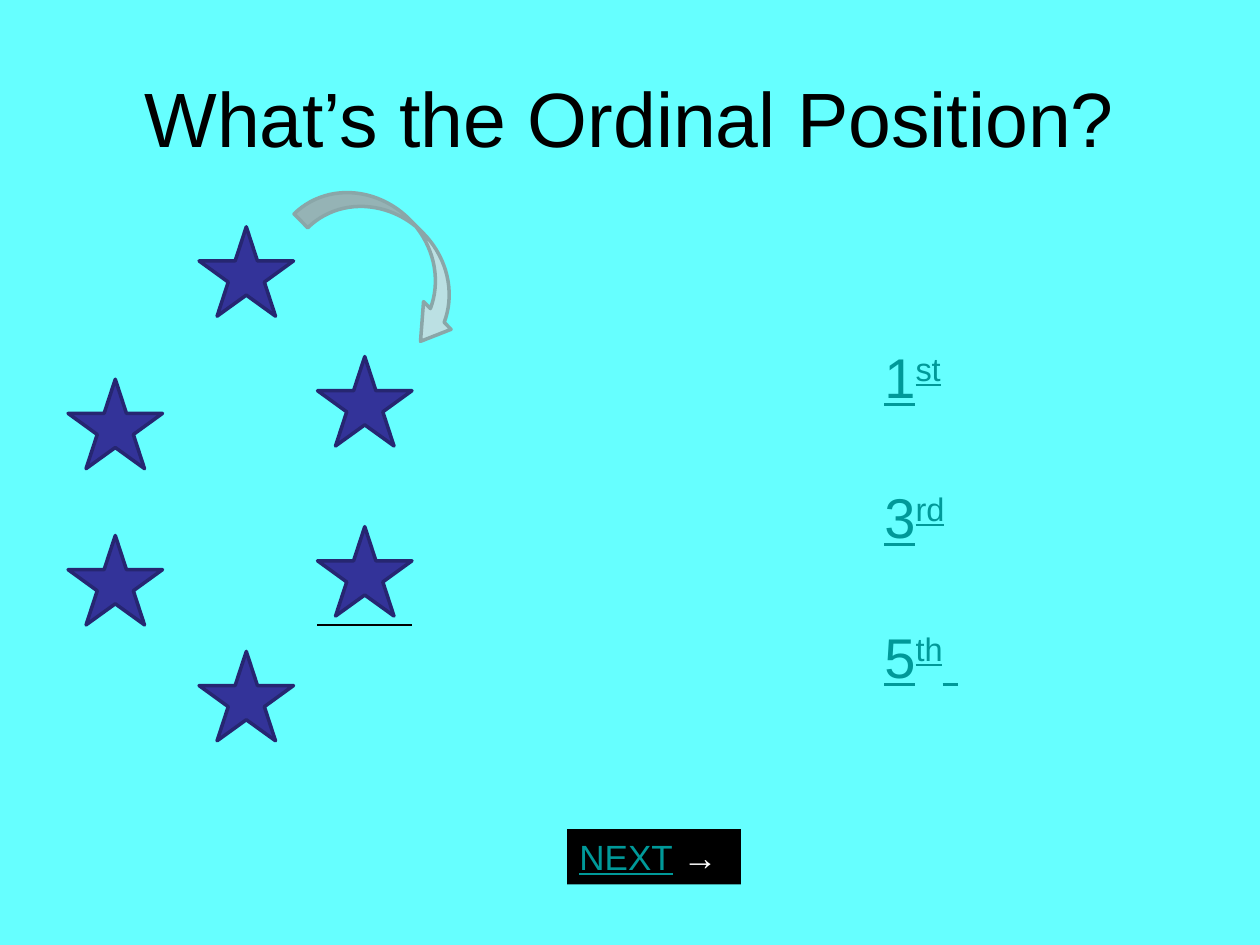
"""Build the ordinal position quiz slide with a ring of stars and three answers."""
import pptx
import pptx.util
import pptx.dml.color
import pptx.enum.shapes
import pptx.enum.text
import pptx.oxml

Inches, Pt = pptx.util.Inches, pptx.util.Pt
RGBColor = pptx.dml.color.RGBColor
Shapes = pptx.enum.shapes.MSO_SHAPE
Align = pptx.enum.text.PP_ALIGN
Anchor = pptx.enum.text.MSO_ANCHOR

AQUA = RGBColor(0x66, 0xFF, 0xFF)
BLACK = RGBColor(0, 0, 0)
WHITE = RGBColor(0xFF, 0xFF, 0xFF)
TEAL = RGBColor(0x00, 0x99, 0x99)
INDIGO = RGBColor(0x33, 0x33, 0x99)
DARK_INDIGO = RGBColor(0x26, 0x26, 0x71)
PALE_BLUE = RGBColor(0xBB, 0xE0, 0xE3)
GREY_BLUE = RGBColor(0x8A, 0xA6, 0xA8)

TITLE = "What’s the Ordinal Position?"
ANSWERS = [("1", "st", ""), ("3", "rd", ""), ("5", "th", " ")]
LEFT, MIDDLE, RIGHT = 0.54, 1.58, 2.52
STARS = [(MIDDLE, 1.8), (LEFT, 3.01), (RIGHT, 2.83),
         (RIGHT, 4.18), (MIDDLE, 5.17), (LEFT, 4.25)]
STAR_SIZE = (0.75, 0.71)
MARKED_STAR = 3
MARK_GAP = 0.07
FIRST_SPACE, ANSWER_SPACE = 5, 41.5


def add_text(slide, box, anchor=Anchor.TOP):
    shape = slide.shapes.add_textbox(*map(Inches, box))
    shape.text_frame.word_wrap = True
    shape.text_frame.vertical_anchor = anchor
    return shape


def style_paragraph(paragraph, size, color):
    paragraph.font.name = "Arial"
    paragraph.font.size = Pt(size)
    paragraph.font.color.rgb = color


def add_run(paragraph, text, color, underline=False, baseline=0):
    run = paragraph.add_run()
    run.text = text
    run.font.name = "Arial"
    run.font.color.rgb = color
    run.font.underline = underline
    if baseline:
        run.font._element.set("baseline", str(baseline))


def add_outlined(slide, kind, box, fill, outline):
    shape = slide.shapes.add_shape(kind, *map(Inches, box))
    shape.shadow.inherit = False
    shape.fill.solid()
    shape.fill.fore_color.rgb = fill
    shape.line.color.rgb = outline
    shape.line.width = Pt(2)
    pptx.oxml.xmlchemy.OxmlElement
    shape.line._ln.append(pptx.oxml.xmlchemy.OxmlElement("a:round"))
    return shape


def add_answers(slide):
    frame = add_text(slide, (6.92, 2.67, 0.92, 2.83)).text_frame
    for index, (number, suffix, tail) in enumerate(ANSWERS):
        paragraph = frame.add_paragraph() if index else frame.paragraphs[0]
        paragraph.space_before = Pt(ANSWER_SPACE if index else FIRST_SPACE)
        style_paragraph(paragraph, 32, TEAL)
        for text, baseline in ((number, 0), (suffix, 30000), (tail, 0)):
            if text:
                add_run(paragraph, text, TEAL, True, baseline)


def add_star_ring(slide):
    for position in STARS:
        add_outlined(slide, Shapes.STAR_5_POINT, position + STAR_SIZE, INDIGO, DARK_INDIGO)

    arrow = add_outlined(slide, Shapes.CURVED_RIGHT_ARROW, (2.8, 1.25, 0.62, 1.58),
                         PALE_BLUE, GREY_BLUE)
    for index, value in enumerate((0.25, 0.5, 0.385)):
        arrow.adjustments[index] = value
    arrow.rotation = 315.2
    arrow._element.spPr.xfrm.set("flipH", "1")

    left, top = STARS[MARKED_STAR]
    width, height = STAR_SIZE
    mark_top = Inches(top + height + MARK_GAP)
    mark = slide.shapes.add_connector(pptx.enum.shapes.MSO_CONNECTOR.STRAIGHT,
                                      Inches(left), mark_top, Inches(left + width), mark_top)
    mark.line.color.rgb = BLACK
    mark.line.width = Pt(0.75)
    mark._element.spPr.append(pptx.oxml.xmlchemy.OxmlElement("a:effectLst"))


def add_next_button(slide):
    button = add_text(slide, (4.5, 6.58, 1.38, 0.44))
    button.fill.solid()
    button.fill.fore_color.rgb = BLACK
    paragraph = button.text_frame.paragraphs[0]
    style_paragraph(paragraph, 20, WHITE)
    add_run(paragraph, "NEXT", TEAL, True)
    add_run(paragraph, " →", WHITE)


def main():
    presentation = pptx.Presentation()
    presentation.slide_width, presentation.slide_height = Inches(10), Inches(7.5)
    slide = presentation.slides.add_slide(presentation.slide_layouts[6])
    slide.background.fill.solid()
    slide.background.fill.fore_color.rgb = AQUA

    title = add_text(slide, (0.5, 0.3, 9, 1.25), Anchor.MIDDLE).text_frame.paragraphs[0]
    title.text = TITLE
    title.alignment = Align.CENTER
    style_paragraph(title, 44, BLACK)

    add_answers(slide)
    add_star_ring(slide)
    add_next_button(slide)
    presentation.save("out.pptx")


if __name__ == "__main__":
    main()
